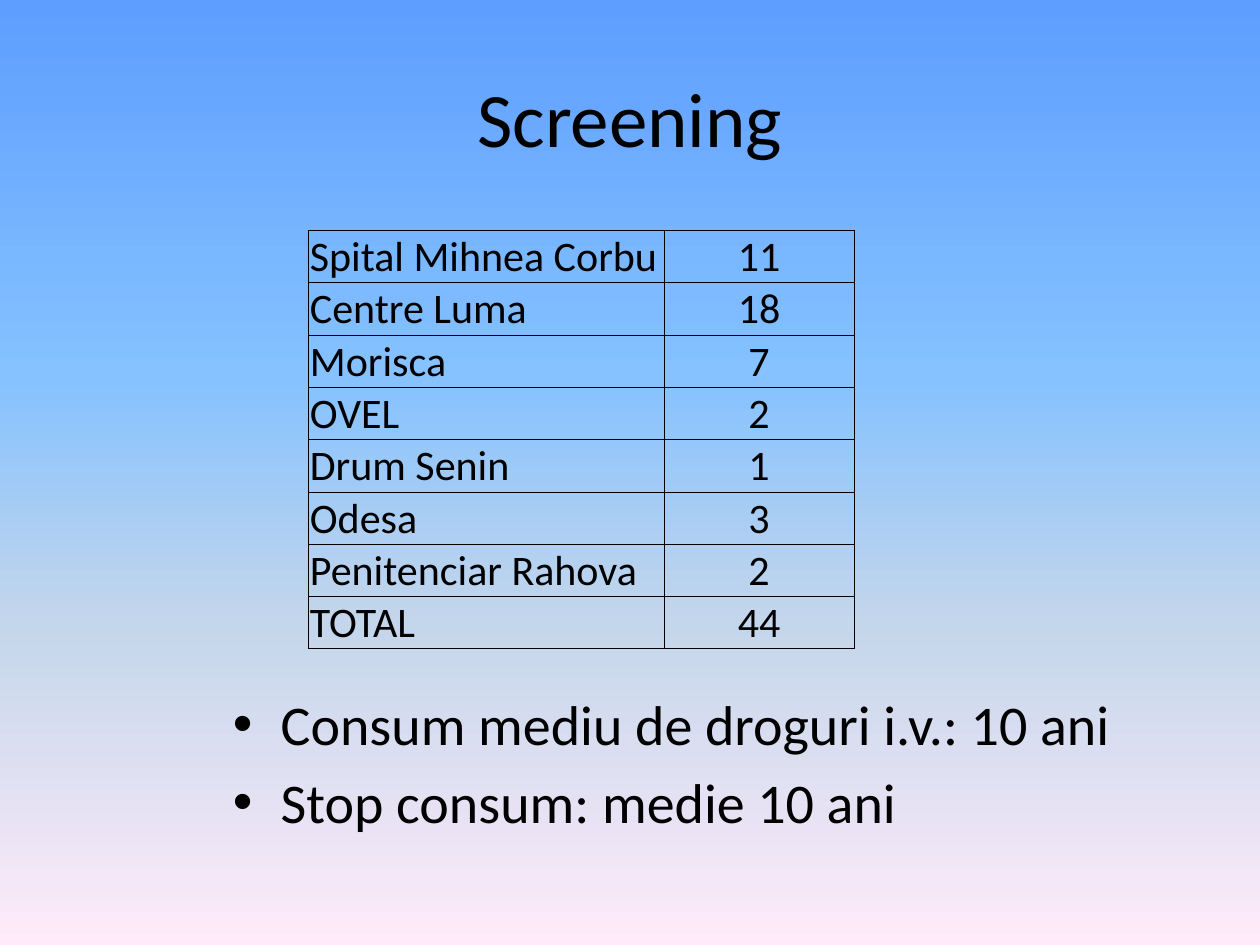
"""Build the Screening slide: a title, a table of counts and two bullets."""
from lxml import etree
from pptx import Presentation
from pptx.dml.color import RGBColor
from pptx.enum.text import MSO_ANCHOR, PP_ALIGN
from pptx.oxml.ns import qn
from pptx.util import Inches, Pt

LEFT, CENTER = PP_ALIGN.LEFT, PP_ALIGN.CENTER
TOP, MIDDLE, BOTTOM = MSO_ANCHOR.TOP, MSO_ANCHOR.MIDDLE, MSO_ANCHOR.BOTTOM

TITLE = "Screening"
COUNTS = [
    ("Spital Mihnea Corbu", "11"),
    ("Centre Luma", "18"),
    ("Morisca", "7"),
    ("OVEL", "2"),
    ("Drum Senin", "1"),
    ("Odesa", "3"),
    ("Penitenciar Rahova", "2"),
    ("TOTAL", "44"),
]
BULLETS = ["Consum mediu de droguri i.v.: 10 ani", "Stop consum: medie 10 ani"]

COLORS = {"text": "000000", "border": "000000"}
BACKGROUND_STOPS = {0: "5E9EFF", 40: "85C2FF", 66: "C4D6EB", 100: "FFEBFA"}
FONT = "Calibri"
SIZES = {"title": 44, "table": 24, "bullets": 32}
SLIDE_SIZE = (10, 7.5)
TITLE_BOX = (0.5, 0.3, 9, 1.25)
BULLETS_BOX = (1.75, 5.42, 7.33, 1.29)
TABLE_ORIGIN = (2.45, 1.83)
TABLE_HEIGHT = 3.32
COLUMNS = [(2.82, LEFT), (1.51, CENTER)]
BORDER_WIDTH = 0.5
HANGING_INDENT = 0.38
CELL_FORMAT = {
    "margin_left": Inches(0.01),
    "margin_right": Inches(0.01),
    "margin_top": Inches(0.01),
    "margin_bottom": 0,
    "vertical_anchor": BOTTOM,
}


def set_attributes(target, values):
    for name, value in values.items():
        setattr(target, name, value)


def add_color(parent, color):
    etree.SubElement(parent, qn("a:srgbClr"), val=color)


def write(paragraph, text, size, alignment=LEFT):
    paragraph.alignment = alignment
    run = paragraph.add_run()
    run.text = text
    set_attributes(run.font, {"name": FONT, "size": Pt(size)})
    run.font.color.rgb = RGBColor.from_string(COLORS["text"])


def paint_background(slide):
    fill = slide.background.fill
    fill.gradient()
    fill.gradient_angle = 270
    stops = slide.background._cSld.find(".//" + qn("a:gsLst"))
    for stop in list(stops):
        stops.remove(stop)
    for share, color in BACKGROUND_STOPS.items():
        add_color(etree.SubElement(stops, qn("a:gs"), pos=str(share * 1000)), color)


def add_text_frame(slide, box, anchor):
    text_frame = slide.shapes.add_textbox(*map(Inches, box)).text_frame
    set_attributes(text_frame, {"word_wrap": True, "vertical_anchor": anchor})
    return text_frame


def add_borders(cell):
    properties = cell._tc.get_or_add_tcPr()
    for side in ("lnL", "lnR", "lnT", "lnB"):
        line = etree.SubElement(properties, qn(f"a:{side}"), w=str(Pt(BORDER_WIDTH)))
        add_color(etree.SubElement(line, qn("a:solidFill")), COLORS["border"])


def add_counts(slide):
    width = sum(column_width for column_width, _ in COLUMNS)
    box = (*TABLE_ORIGIN, width, TABLE_HEIGHT)
    table = slide.shapes.add_table(len(COUNTS), len(COLUMNS), *map(Inches, box)).table
    set_attributes(table, {"first_row": False, "horz_banding": False})
    for column, (column_width, _) in zip(table.columns, COLUMNS):
        column.width = Inches(column_width)
    for row, texts in zip(table.rows, COUNTS):
        for cell, text, (_, alignment) in zip(row.cells, texts, COLUMNS):
            set_attributes(cell, CELL_FORMAT)
            add_borders(cell)
            cell.fill.background()
            write(cell.text_frame.paragraphs[0], text, SIZES["table"], alignment)


def add_bullets(slide):
    text_frame = add_text_frame(slide, BULLETS_BOX, TOP)
    indent = Inches(HANGING_INDENT)
    for index, text in enumerate(BULLETS):
        paragraph = text_frame.add_paragraph() if index else text_frame.paragraphs[0]
        paragraph.space_before = Pt(0.2 * SIZES["bullets"])
        write(paragraph, text, SIZES["bullets"])
        properties = paragraph._p.get_or_add_pPr()
        properties.set("marL", str(indent))
        properties.set("indent", str(-indent))
        etree.SubElement(properties, qn("a:buFont"), typeface="Arial")
        etree.SubElement(properties, qn("a:buChar"), char="•")


def main():
    presentation = Presentation()
    presentation.slide_width, presentation.slide_height = map(Inches, SLIDE_SIZE)
    slide = presentation.slides.add_slide(presentation.slide_layouts[6])
    paint_background(slide)
    title_frame = add_text_frame(slide, TITLE_BOX, MIDDLE)
    write(title_frame.paragraphs[0], TITLE, SIZES["title"], CENTER)
    add_counts(slide)
    add_bullets(slide)
    presentation.save("out.pptx")


if __name__ == "__main__":
    main()
